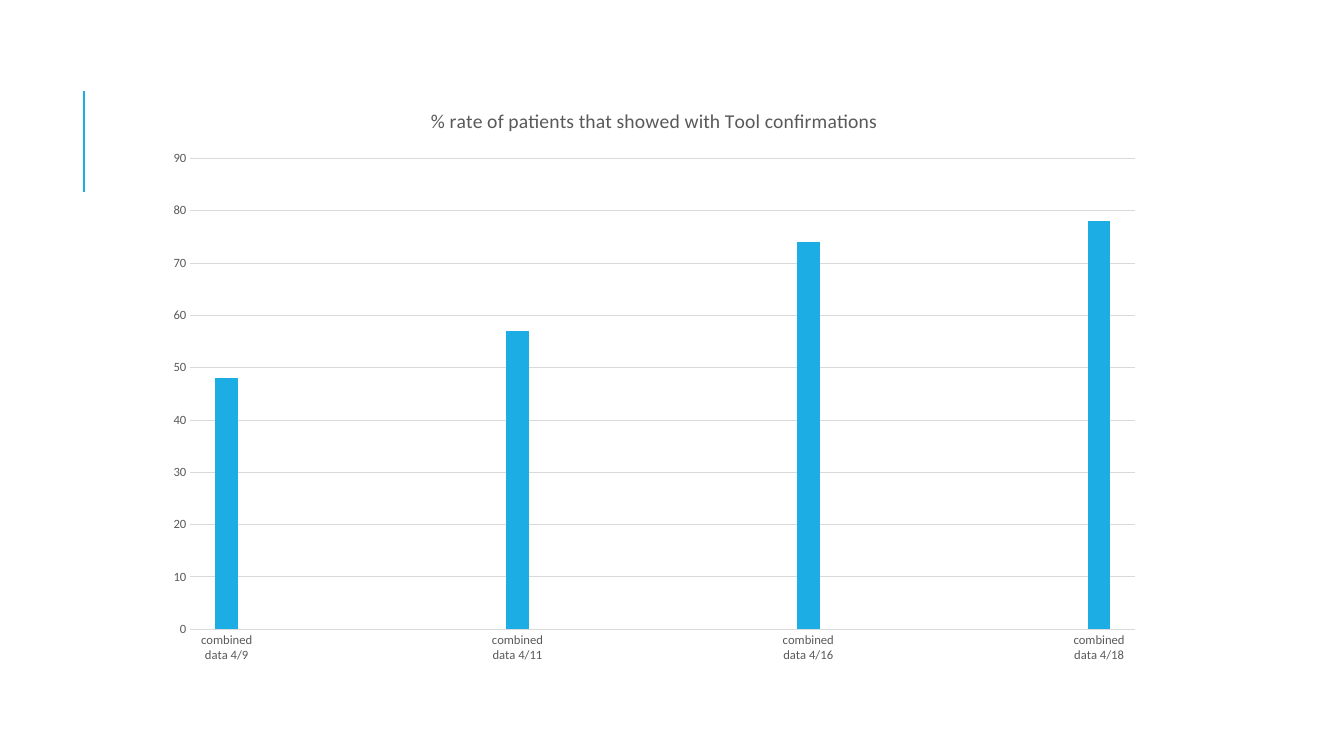
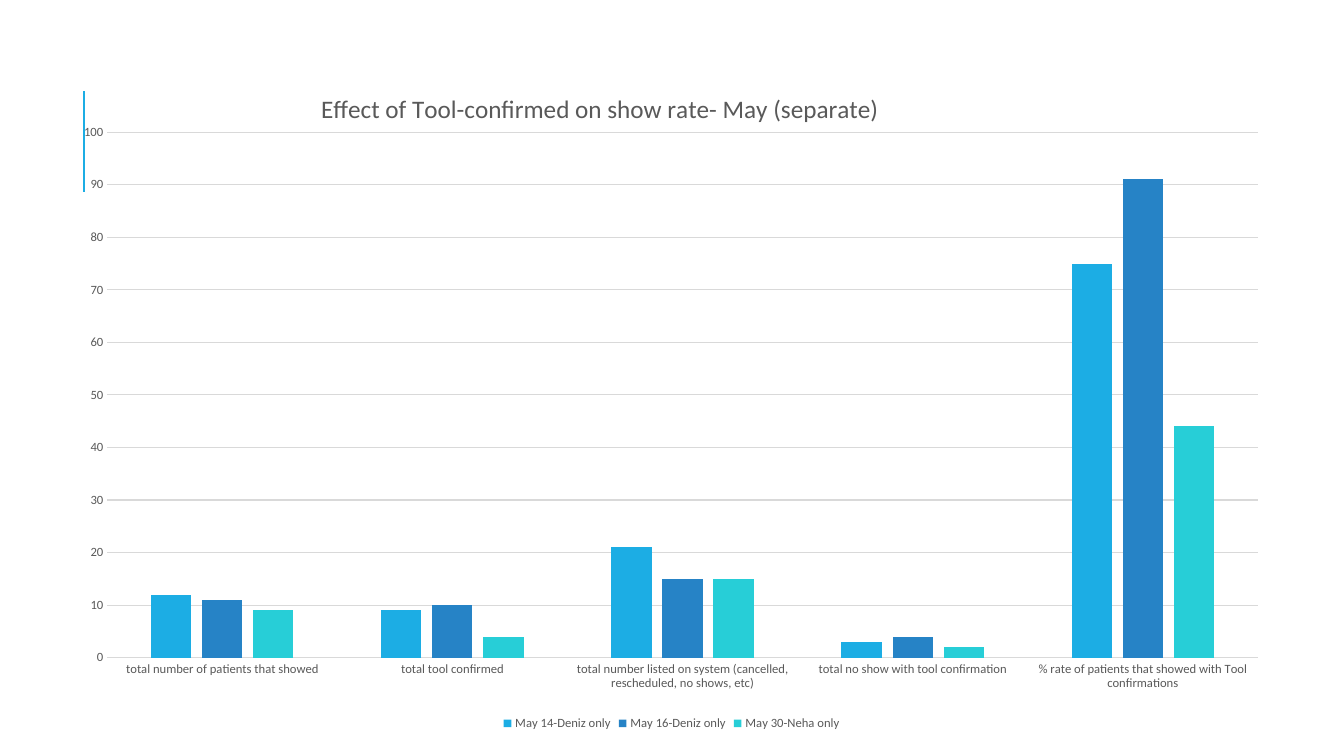
from pptx import Presentation
from pptx.chart.data import CategoryChartData
from pptx.dml.color import RGBColor
from pptx.enum.chart import XL_CHART_TYPE as ChartType, XL_LEGEND_POSITION as LegendPosition
from pptx.enum.chart import XL_TICK_MARK as TickMark
from pptx.enum.shapes import MSO_CONNECTOR as Connector
from pptx.oxml import parse_xml
from pptx.oxml.ns import nsdecls, qn
from pptx.util import Inches, Pt
from lxml import etree

SKY = RGBColor(0x1C, 0xAD, 0xE4)
BLUE = RGBColor(0x26, 0x83, 0xC6)
TURQUOISE = RGBColor(0x27, 0xCE, 0xD7)
TEXT_GREY = RGBColor(0x59, 0x59, 0x59)
GRID_GREY = RGBColor(0xD9, 0xD9, 0xD9)
SERIES_COLOURS = (SKY, BLUE, TURQUOISE)
FONT = "Calibri"

SHOW_RATE = "% rate of patients that showed with Tool confirmations"
DATES = ("4/9", "4/11", "4/16", "4/18")
RATES = (48, 57, 74, 78)
SPACERS = 3  # empty categories between two dates

MAY_CATEGORIES = (
    "total number of patients that showed",
    "total tool confirmed",
    "total number listed on system (cancelled, rescheduled, no shows, etc)",
    "total no show with tool confirmation",
    SHOW_RATE,
)
MAY_SERIES = {
    "May 14-Deniz only": (12, 9, 21, 3, 75),
    "May 16-Deniz only": (11, 10, 15, 4, 91),
    "May 30-Neha only": (9, 4, 15, 2, 44),
}


def spread(values, filler):
    """Put the spacer entries between the values."""
    spaced = []
    for value in values:
        spaced += [value] + [filler] * SPACERS
    return spaced[:-SPACERS]


def style_font(font, size):
    font.name = FONT
    font.size = Pt(size)
    font.bold = False
    font.color.rgb = TEXT_GREY


def style_line(line):
    line.color.rgb = GRID_GREY
    line.width = Pt(0.75)


def add_accent_line(layout, slide):
    """Draw the accent line and hand it to the layout, so all slides share it."""
    accent = slide.shapes.add_connector(
        Connector.STRAIGHT, Inches(0.83), Inches(1.9), Inches(0.83), Inches(0.9))
    accent.line.color.rgb = SKY
    accent.line.width = Pt(1.5)
    etree.SubElement(accent.element.spPr, qn("a:effectLst"))
    layout.shapes.element.append(accent.element)


def place(parent, index, **fractions):
    """Fix a chart part at fractions of the chart's size."""
    old = parent.find(qn("c:layout"))
    if old is not None:
        parent.remove(old)
    layout = parse_xml(f"<c:layout {nsdecls('c')}><c:manualLayout/></c:layout>")
    settings = {"xMode": "edge", "yMode": "edge", **fractions}
    if "w" in fractions:
        settings = {"layoutTarget": "inner", **settings}
    for tag, value in settings.items():
        etree.SubElement(layout[0], qn(f"c:{tag}")).set("val", str(value))
    parent.insert(index, layout)


def style_axes(chart, maximum):
    for axis in (chart.category_axis, chart.value_axis):
        axis.major_tick_mark = axis.minor_tick_mark = TickMark.NONE
        style_font(axis.tick_labels.font, 9)
    style_line(chart.category_axis.format.line)
    values = chart.value_axis
    values.minimum_scale, values.maximum_scale, values.major_unit = 0, maximum, 10
    values.format.line.fill.background()
    style_line(values.major_gridlines.format.line)


def add_title(chart, text, size):
    chart.has_title = True
    chart.chart_title.include_in_layout = False
    span = chart.chart_title.text_frame.paragraphs[0].add_run()
    span.text = text
    style_font(span.font, size)


def add_column_chart(slide, box, categories, series, title, title_size, maximum):
    data = CategoryChartData()
    data.categories = categories
    for name, values in series.items():
        data.add_series(name, values)
    chart = slide.shapes.add_chart(
        ChartType.COLUMN_CLUSTERED, *map(Inches, box), data).chart
    chart.font.name = FONT
    chart.font.size = Pt(10)

    # Transparent background keeps the accent line visible
    chart.element.find(qn("c:chart")).addnext(parse_xml(
        f"<c:spPr {nsdecls('c', 'a')}><a:noFill/><a:ln><a:noFill/></a:ln></c:spPr>"))

    add_title(chart, title, title_size)
    style_axes(chart, maximum)
    chart.has_legend = len(series) > 1
    if chart.has_legend:
        chart.legend.position = LegendPosition.BOTTOM
        chart.legend.include_in_layout = False
        style_font(chart.legend.font, 9)

    plot = chart.plots[0]
    plot.gap_width, plot.overlap = 219, -27
    plot.vary_by_categories = False
    for columns, colour in zip(plot.series, SERIES_COLOURS):
        columns.format.fill.solid()
        columns.format.fill.fore_color.rgb = colour
    return chart


def place_plot(chart, **fractions):
    place(chart.element.find(f".//{qn('c:plotArea')}"), 0, **fractions)


def build_rate_slide(slide):
    chart = add_column_chart(
        slide, (1.52, 0.86, 9.94, 5.84),
        spread([f"combined data {date}" for date in DATES], ""),
        {SHOW_RATE: spread(RATES, None)}, SHOW_RATE, 14, 90)
    place_plot(chart, x=0.037, y=0.122, w=0.943, h=0.8)


def build_may_slide(slide):
    chart = add_column_chart(
        slide, (0.59, 0.52, 12.14, 6.77), MAY_CATEGORIES, MAY_SERIES,
        "Effect of Tool-confirmed on show rate- May (separate)", 18, 100)
    place(chart.chart_title.element, 1, x=0.21, y=0.05)
    place_plot(chart, x=0.039, y=0.117, w=0.94, h=0.77)


def main():
    deck = Presentation()
    deck.slide_width, deck.slide_height = Inches(13.33), Inches(7.5)
    blank = deck.slide_layouts[6]
    rate_slide, may_slide = (deck.slides.add_slide(blank) for _ in range(2))
    add_accent_line(blank, rate_slide)
    build_rate_slide(rate_slide)
    build_may_slide(may_slide)
    deck.save("out.pptx")


if __name__ == "__main__":
    main()
